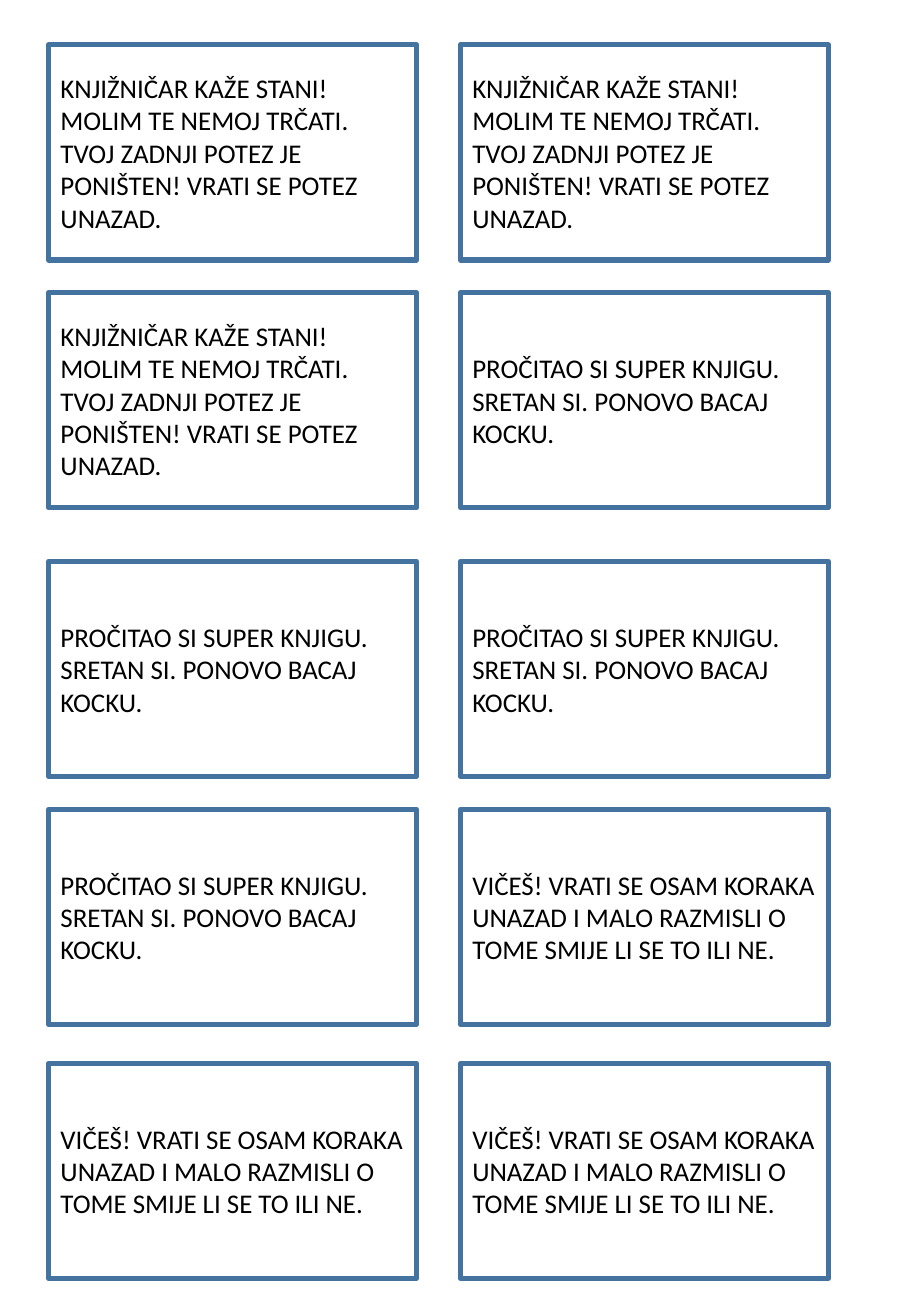
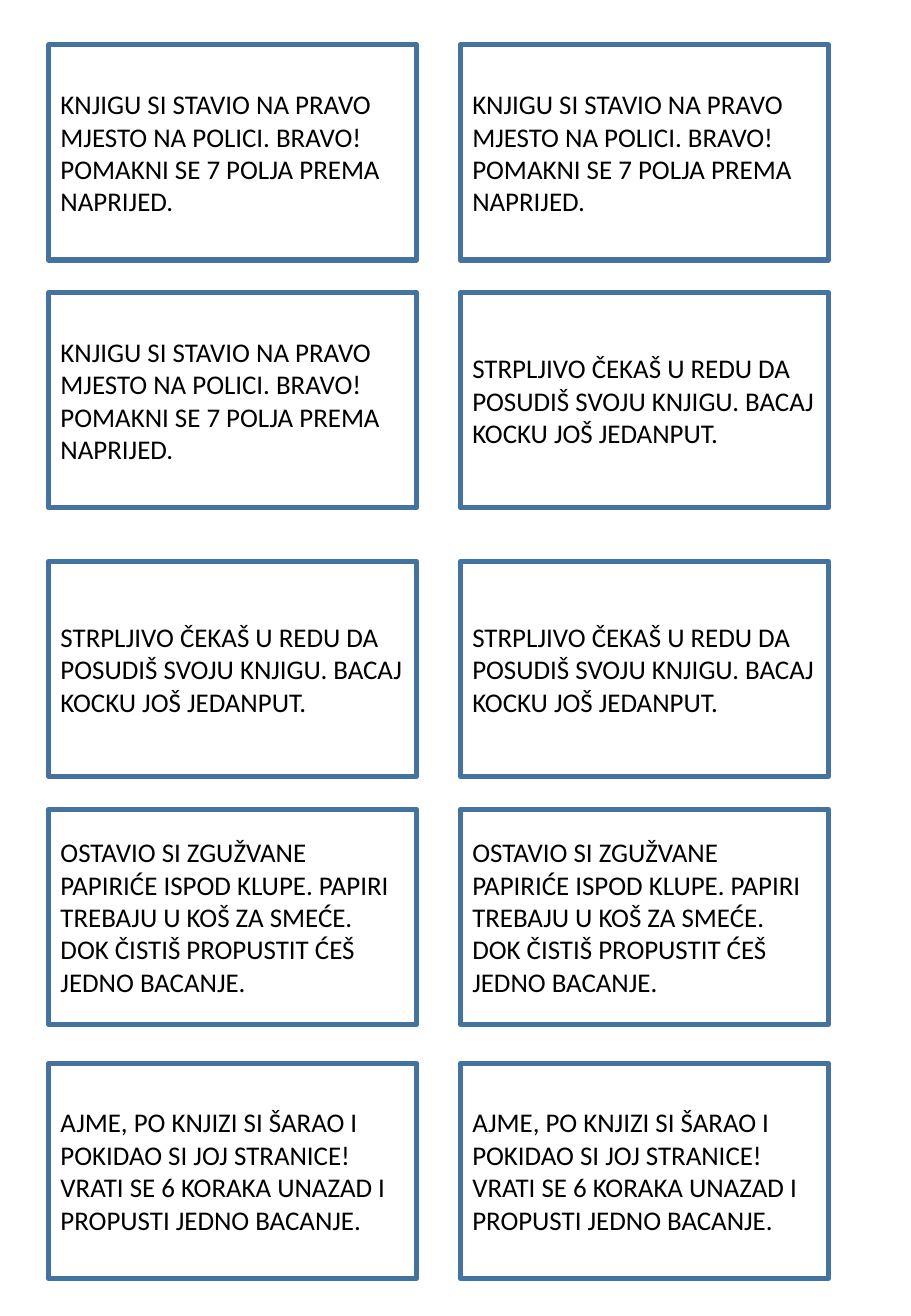
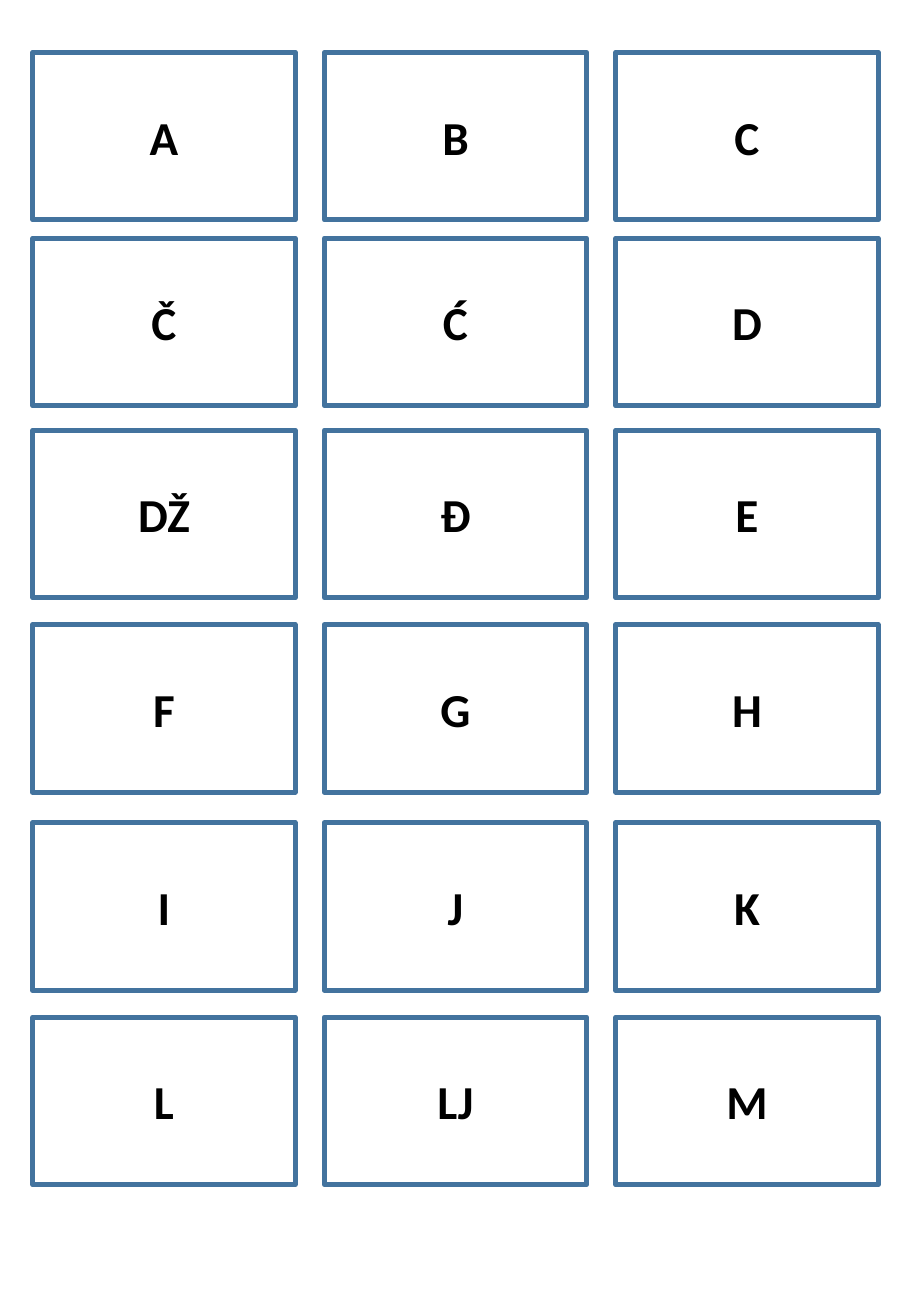
from itertools import product

from pptx import Presentation
from pptx.dml.color import RGBColor
from pptx.enum.shapes import MSO_SHAPE as Shape
from pptx.enum.text import MSO_ANCHOR as Anchor, PP_ALIGN as Align
from pptx.util import Inches, Pt

# Shared style
FONT = "Calibri"
WHITE, BLUE, BLACK = "FFFFFF", "43739E", "000000"
BORDER = 3

# Card texts: one string per paragraph
STOP = ["KNJIŽNIČAR KAŽE STANI! MOLIM TE NEMOJ TRČATI. TVOJ ZADNJI POTEZ JE "
        "PONIŠTEN! VRATI SE POTEZ UNAZAD."]
GOOD_BOOK = ["PROČITAO SI SUPER KNJIGU.", "SRETAN SI. PONOVO BACAJ KOCKU."]
SHOUTING = ["VIČEŠ! VRATI SE OSAM KORAKA UNAZAD I MALO RAZMISLI O TOME SMIJE LI "
            "SE TO ILI NE."]
RIGHT_SHELF = ["KNJIGU SI STAVIO NA PRAVO MJESTO NA POLICI. BRAVO! POMAKNI SE 7 "
               "POLJA PREMA NAPRIJED."]
QUEUE = ["STRPLJIVO ČEKAŠ U REDU DA POSUDIŠ SVOJU KNJIGU. BACAJ KOCKU JOŠ "
         "JEDANPUT."]
LITTER = ["OSTAVIO SI ZGUŽVANE PAPIRIĆE ISPOD KLUPE. PAPIRI TREBAJU U KOŠ ZA "
          "SMEĆE. DOK ČISTIŠ PROPUSTIT ĆEŠ JEDNO BACANJE."]
TORN_PAGES = ["AJME, PO KNJIZI SI ŠARAO I POKIDAO SI JOJ STRANICE! VRATI SE 6 "
              "KORAKA UNAZAD I PROPUSTI JEDNO BACANJE."]
LETTERS = "A B C Č Ć D DŽ Đ E F G H I J K L LJ M".split()

# Card grids: positions and sizes in inches, text size in points
MESSAGE_GRID = dict(lefts=[0.4, 3.79], tops=[0.37, 2.41, 4.62, 6.66, 8.75],
                    size=(3.03, 1.77), points=16, bold=False, align=Align.LEFT)
LETTER_GRID = dict(lefts=[0.27 + 2.4 * col for col in range(3)],
                   tops=[0.43, 1.96, 3.54, 5.14, 6.77, 8.37],
                   size=(2.16, 1.38), points=28, bold=True, align=Align.CENTER)

# Slides: cards run left to right, then down
SLIDES = [
    (MESSAGE_GRID, [STOP] * 3 + [GOOD_BOOK] * 4 + [SHOUTING] * 3),
    (MESSAGE_GRID, [RIGHT_SHELF] * 3 + [QUEUE] * 3 + [LITTER] * 2 + [TORN_PAGES] * 2),
    (LETTER_GRID, [[letter] for letter in LETTERS]),
]


def color(value):
    return RGBColor.from_string(value)


def add_card(slide, left, top, paragraphs, grid):
    width, height = grid["size"]
    sp = slide.shapes.add_shape(Shape.RECTANGLE, Inches(left), Inches(top),
                                Inches(width), Inches(height))
    sp.shadow.inherit = False
    sp.fill.solid()
    sp.fill.fore_color.rgb = color(WHITE)
    sp.line.color.rgb = color(BLUE)
    sp.line.width = Pt(BORDER)
    tf = sp.text_frame
    tf.word_wrap = True
    tf.vertical_anchor = Anchor.MIDDLE
    for i, text in enumerate(paragraphs):
        p = tf.add_paragraph() if i else tf.paragraphs[0]
        p.alignment = grid["align"]
        r = p.add_run()
        r.text = text
        r.font.name = FONT
        r.font.size = Pt(grid["points"])
        r.font.bold = grid["bold"]
        r.font.color.rgb = color(BLACK)


def main():
    prs = Presentation()
    prs.slide_width, prs.slide_height = Inches(7.5), Inches(10.83)
    for grid, cards in SLIDES:
        slide = prs.slides.add_slide(prs.slide_layouts[6])
        places = product(grid["tops"], grid["lefts"])
        for (top, left), paragraphs in zip(places, cards):
            add_card(slide, left, top, paragraphs, grid)
    prs.save("out.pptx")


if __name__ == "__main__":
    main()
